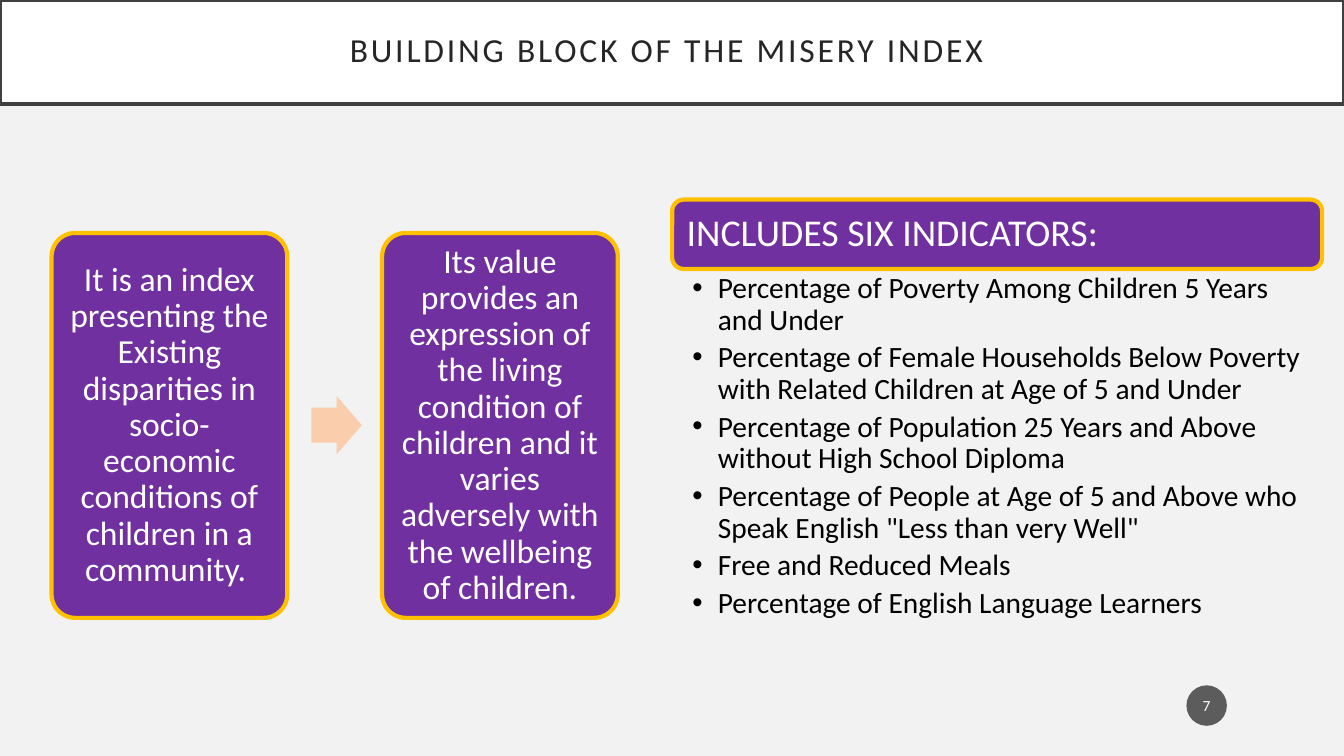
from lxml import etree
from pptx import Presentation
from pptx.dml.color import RGBColor
from pptx.enum.shapes import MSO_SHAPE
from pptx.enum.text import MSO_ANCHOR, MSO_AUTO_SIZE, PP_ALIGN
from pptx.oxml.ns import qn
from pptx.util import Cm, Pt

ROUNDED = MSO_SHAPE.ROUNDED_RECTANGLE
ARROW = MSO_SHAPE.RIGHT_ARROW
OVAL = MSO_SHAPE.OVAL
MIDDLE = MSO_ANCHOR.MIDDLE
TOP = MSO_ANCHOR.TOP
NO_FIT = MSO_AUTO_SIZE.NONE
LEFT = PP_ALIGN.LEFT
CENTER = PP_ALIGN.CENTER

PURPLE, GOLD, PEACH = "7030A0", "FFC000", "FACEAC"
WHITE, BLACK, PALE_GRAY = "FFFFFF", "000000", "F2F2F2"


def style(shape, place, fill=None, line=None, line_width=3):
    shape.left, shape.top, shape.width, shape.height = [Cm(length) for length in place]
    if fill:
        shape.fill.solid()
        shape.fill.fore_color.rgb = RGBColor.from_string(fill)
    if line:
        shape.line.color.rgb = RGBColor.from_string(line)
        shape.line.width = Pt(line_width)
    else:
        shape.line.fill.background()
    shape.shadow.inherit = False


def write(shape, lines, size, color, align, anchor, insets, spacing=0.9, after=0):
    frame = shape.text_frame
    frame.word_wrap = True
    frame.auto_size = NO_FIT
    frame.vertical_anchor = anchor
    frame.margin_left, frame.margin_top, frame.margin_right, frame.margin_bottom = [
        Cm(inset) for inset in insets
    ]
    for number, line in enumerate(lines):
        para = frame.add_paragraph() if number else frame.paragraphs[0]
        para.alignment = align
        para.line_spacing = spacing
        para.space_before = Pt(0)
        para.space_after = Pt(after)
        span = para.add_run()
        span.text = line
        span.font.name = "Calibri"
        span.font.size = Pt(size)
        span.font.color.rgb = RGBColor.from_string(color)


deck = Presentation()
deck.slide_width, deck.slide_height = Cm(33.87), Cm(19.05)
page = deck.slides.add_slide(deck.slide_layouts[1])
page.background.fill.solid()
page.background.fill.fore_color.rgb = RGBColor.from_string(PALE_GRAY)

title = page.shapes.title
style(title, (0, 0, 33.87, 2.62), WHITE, "404040", 2.5)
write(title, ["BUILDING BLOCK OF THE MISERY INDEX "], 24, "262626", CENTER, MIDDLE, [0.5] * 4)
title.text_frame.paragraphs[0].runs[0].font._element.set("spc", "200")

statements = [
    "It is an index presenting the Existing disparities in socio-economic "
    "conditions of children in a community. ",
    "Its value provides an expression of the living condition of children "
    "and it varies adversely with the wellbeing of children.",
]
for column, statement in enumerate(statements):
    place = (1.3 + column * 8.33, 5.87, 5.94, 9.7)
    box = page.shapes.add_shape(ROUNDED, 0, 0, 0, 0)
    box.adjustments[0] = 0.1
    style(box, place, PURPLE, GOLD)
    write(box, [statement], 24, WHITE, CENTER, MIDDLE, [0.25] * 4)

arrow = page.shapes.add_shape(ARROW, 0, 0, 0, 0)
style(arrow, (7.85, 9.98, 1.27, 1.47), PEACH)
arrow.adjustments[0] = 0.6
arrow.adjustments[1] = 0.5

header = page.shapes.add_shape(ROUNDED, 0, 0, 0, 0)
style(header, (16.94, 5.03, 16.38, 1.75), PURPLE, GOLD)
write(header, ["INCLUDES SIX INDICATORS:"], 27, WHITE, LEFT, MIDDLE, [0.28] * 4)

indicators = [
    "Percentage of Poverty Among Children 5 Years and Under",
    "Percentage of Female Households Below Poverty with Related Children at Age of 5 and Under",
    "Percentage of Population 25 Years and Above without High School Diploma",
    'Percentage of People at Age of 5 and Above who Speak English "Less than very Well"',
    "Free and Reduced Meals",
    "Percentage of English Language Learners",
]
body = page.placeholders[1]
style(body, (16.94, 6.78, 16.38, 9.63))
write(body, indicators, 21, BLACK, LEFT, TOP, (0.51, 0.1, 0.53, 0.1), after=4.2)
for para in body.text_frame.paragraphs:
    properties = para._p.get_or_add_pPr()
    properties.set("marL", str(Cm(0.64)))
    properties.set("indent", str(-Cm(0.64)))
    etree.SubElement(properties, qn("a:buChar"), char="•")

badge = page.shapes.add_shape(OVAL, 0, 0, 0, 0)
style(badge, (29.9, 17.27, 1.02, 1.02), "1D1D1D")
badge_color = badge.fill._xPr.find(qn("a:solidFill"))[0]
etree.SubElement(badge_color, qn("a:alpha"), val="70000")
write(badge, ["7"], 11, WHITE, CENTER, MIDDLE, (0.05, 0.13, 0.05, 0.13), spacing=1.0)

deck.save("out.pptx")
